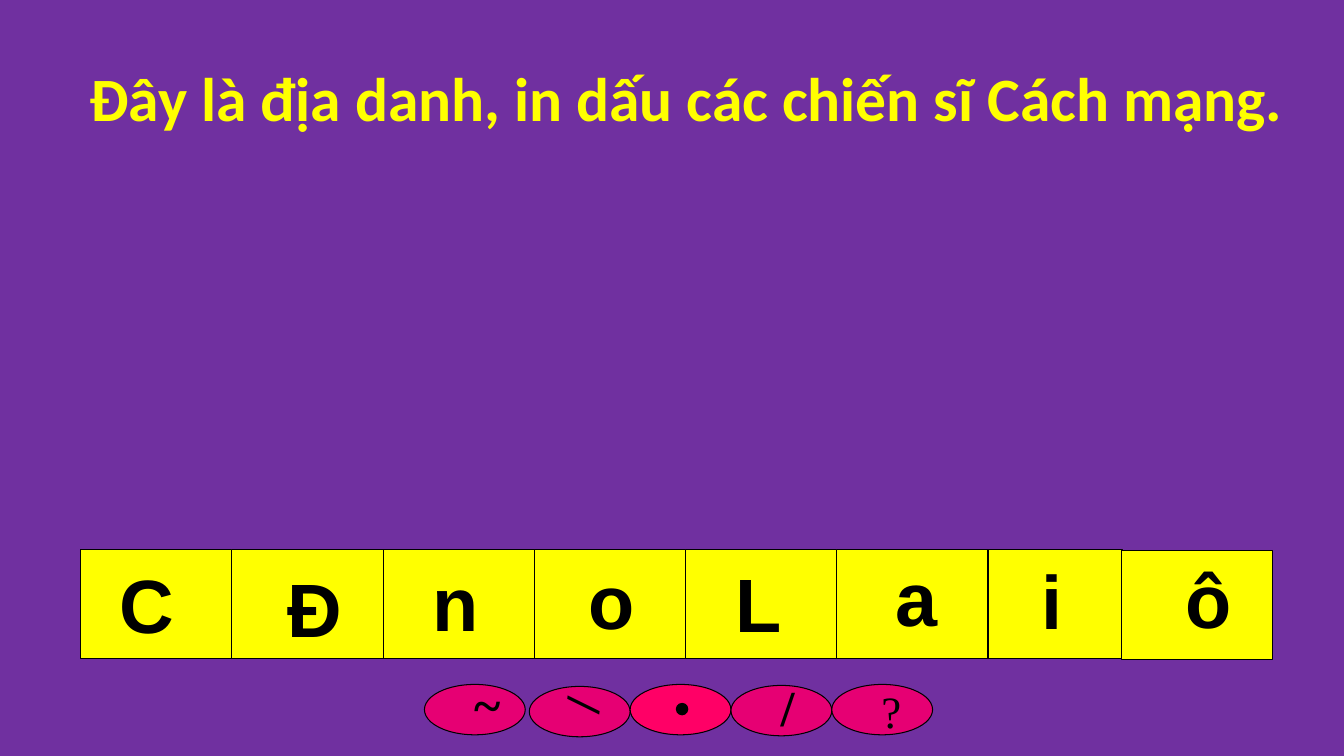
import pptx
import pptx.dml.color
import pptx.enum.shapes
import pptx.enum.text
import pptx.util

WIDTH, HEIGHT = 13.33, 7.5
BLACK, YELLOW, PINK, ROSE, PURPLE = "000000", "FFFF00", "E60073", "FF0066", "7030A0"
SHAPES = pptx.enum.shapes.MSO_SHAPE
FIT = pptx.enum.text.MSO_AUTO_SIZE
CENTER = pptx.enum.text.PP_ALIGN.CENTER

# Letter row: left edge, top, column width and height
ROW_LEFT, ROW_TOP, COLUMN, ROW = 0.8, 5.45, 1.5, 1.08
# Letter, tile column, letter centre in columns, box width, drop below the row top
LETTERS = [
    ("C", 0, 0.44, 0.75, 0.04),
    ("Đ", 1, 1.55, 0.75, 0.08),
    ("n", 2, 2.48, 0.66, 0.02),
    ("o", 3, 3.51, 0.66, 0),
    ("L", 4, 4.48, 0.66, 0.03),
    ("a", 5, 5.53, 0.62, -0.03),
    ("i", 5.89, 6.42, 0.41, 0),
    ("ô", 6.88, 7.46, 0.66, -0.01),
]

# Tone mark row: ovals one inch apart
MARK_LEFT, MARK_TOP, MARK_HEIGHT = 4.25, 6.79, 0.5
# Mark, oval column, oval drop, colour, text top, size, bold, rotation
MARKS = [
    ("~", -0.04, 0, PINK, 6.63, 36, True, 0),
    ("/", 1, 0.02, PINK, 6.69, 36, True, 277.3),
    ("", 2, 0, ROSE, 0, 0, False, 0),
    ("/", 3, 0.01, PINK, 6.66, 36, True, 0),
    ("?", 4, 0, PINK, 6.73, 32, False, 0),
]


def colour(value):
    return pptx.dml.color.RGBColor.from_string(value)


def inches(*lengths):
    return [pptx.util.Inches(length) for length in lengths]


def format_text(frame, text, font, size, value, bold):
    frame.text = text
    para = frame.paragraphs[0]
    para.alignment = CENTER
    span = para.runs[0]
    span.font.name = font
    span.font.size = pptx.util.Pt(size)
    span.font.bold = bold
    span.font.color.rgb = colour(value)
    return para


def add_figure(page, kind, place, fill, weight=0.75):
    shape = page.shapes.add_shape(kind, *inches(*place))
    shape.shadow.inherit = False
    shape.fill.solid()
    shape.fill.fore_color.rgb = colour(fill)
    shape.line.color.rgb = colour(BLACK)
    shape.line.width = pptx.util.Pt(weight)


def add_label(page, text, place, font, size, bold, wrap):
    box = page.shapes.add_textbox(*inches(*place))
    format_text(box.text_frame, text, font, size, BLACK, bold)
    box.text_frame.word_wrap = wrap
    box.text_frame.auto_size = FIT.SHAPE_TO_FIT_TEXT
    return box


def set_title(page, text):
    title = page.shapes.title
    title.left, title.top, title.width, title.height = inches(0.3, 0.28, WIDTH - 0.3, 1.45)
    frame = title.text_frame
    para = format_text(frame, text, "Calibri", 44, YELLOW, True)
    para.line_spacing = 0.9
    frame.word_wrap = True
    frame.auto_size = FIT.NONE
    frame.vertical_anchor = pptx.enum.text.MSO_ANCHOR.MIDDLE


def add_letters(page):
    # The right-hand tiles lie under their left neighbours, except the last one
    for _, column, *_ in LETTERS[-2::-1] + LETTERS[-1:]:
        drop = 0.01 if column == LETTERS[-1][1] else 0
        place = (ROW_LEFT + column * COLUMN, ROW_TOP + drop, COLUMN, ROW)
        add_figure(page, SHAPES.RECTANGLE, place, YELLOW)
    for letter, _, centre, width, drop in LETTERS:
        left = ROW_LEFT + centre * COLUMN - width / 2
        add_label(page, letter, (left, ROW_TOP + drop, width, 1.01), "Arial", 54, True, False)


def add_marks(page):
    for mark, column, drop, fill, top, size, bold, rotation in MARKS:
        left = MARK_LEFT + column
        add_figure(page, SHAPES.OVAL, (left, MARK_TOP + drop, 1, MARK_HEIGHT), fill)
        if mark:
            place = (left + 0.42, top, 0.17, size / 50)
            box = add_label(page, mark, place, "Times New Roman", size, bold, True)
            box.rotation = rotation
        else:
            add_figure(page, SHAPES.OVAL, (left + 0.46, 6.98, 0.11, 0.11), BLACK, 1)


def main():
    deck = pptx.Presentation()
    deck.slide_width, deck.slide_height = inches(WIDTH, HEIGHT)
    page = deck.slides.add_slide(deck.slide_layouts[5])
    page.background.fill.solid()
    page.background.fill.fore_color.rgb = colour(PURPLE)
    set_title(page, "Đây là địa danh, in dấu các chiến sĩ Cách mạng.")
    add_letters(page)
    add_marks(page)
    deck.save("out.pptx")


if __name__ == "__main__":
    main()
